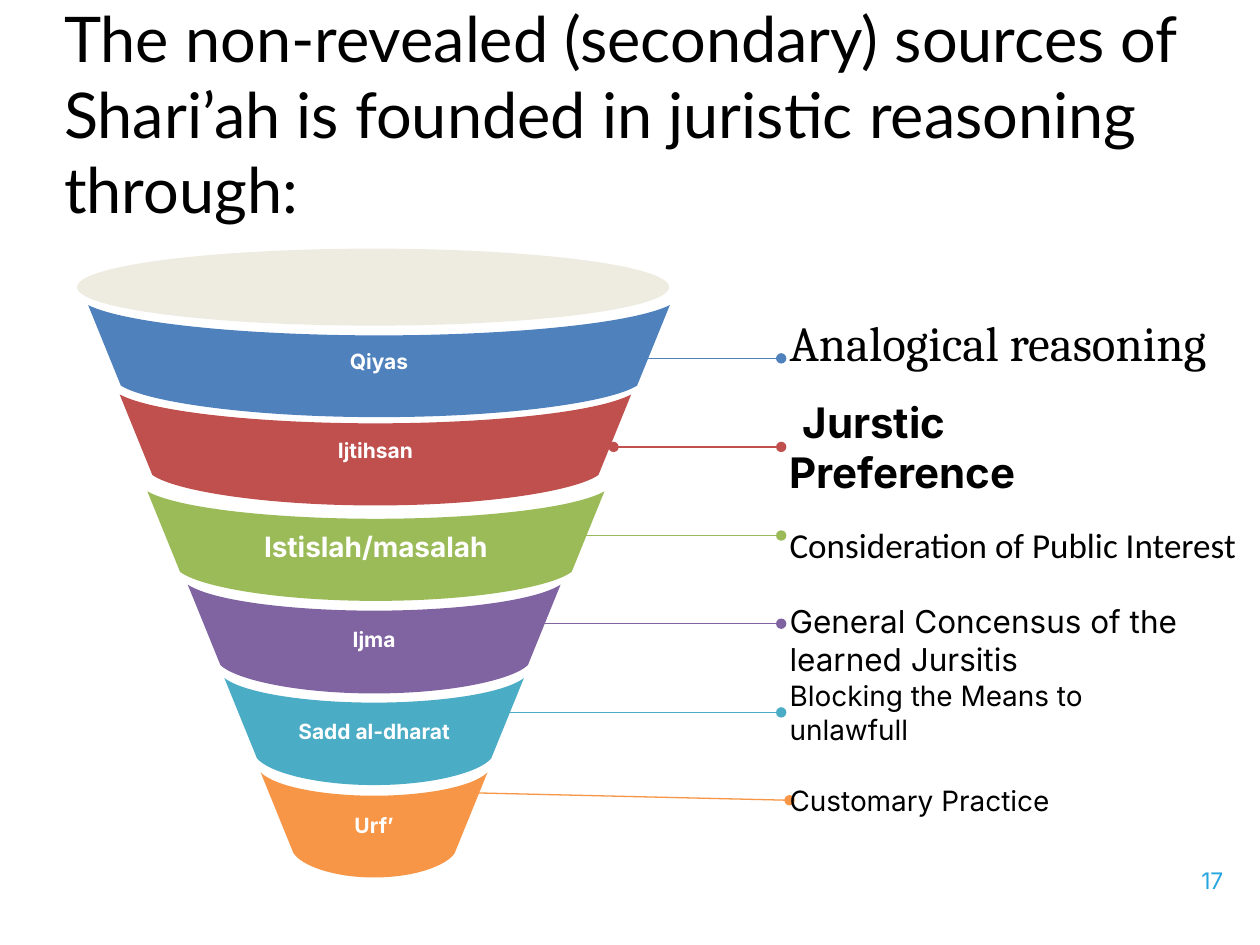
from dataclasses import dataclass

from lxml import etree
from pptx import Presentation
from pptx.dml.color import RGBColor
from pptx.enum.shapes import MSO_CONNECTOR, MSO_SHAPE
from pptx.enum.text import MSO_ANCHOR, MSO_AUTO_SIZE, PP_ALIGN
from pptx.oxml.ns import qn
from pptx.util import Pt

LEFT, CENTER, RIGHT = PP_ALIGN.LEFT, PP_ALIGN.CENTER, PP_ALIGN.RIGHT
MIDDLE, BOTTOM = MSO_ANCHOR.MIDDLE, MSO_ANCHOR.BOTTOM
NO_FIT = MSO_AUTO_SIZE.NONE
STRAIGHT, ELLIPSE = MSO_CONNECTOR.STRAIGHT, MSO_SHAPE.OVAL
LEFT_SIDE = 1


@dataclass(frozen=True)
class Theme:
    """Colours, fonts and type sizes of the slide."""
    ink: str = "000000"
    paper: str = "FFFFFF"
    rim: str = "EEECE1"
    number: str = "25A6E0"
    title_font: str = "Lato"
    body_font: str = "Inter"
    serif_font: str = "Cambria"
    plain_font: str = "Calibri"
    title_size: int = 36
    huge_size: int = 28
    large_size: int = 24
    medium_size: int = 20
    label_size: int = 18
    small_size: int = 16
    band_size: int = 12
    number_size: int = 13


@dataclass(frozen=True)
class Band:
    """One funnel band: its name, colour, box and name size."""
    name: str
    color: str
    box: tuple
    size: int


@dataclass(frozen=True)
class Label:
    """One explanation with its box, type and leader line."""
    text: str
    box: tuple
    font: str
    size: int
    start: tuple
    end: tuple
    bold: bool = False
    indent: float = 0


THEME = Theme()
LABEL_LEFT, LEADER_END = 451.2, 446.4

BANDS = [
    Band("Qiyas", "4F81BD", (50.4, 174.4, 332.4, 64), THEME.band_size),
    Band("Ijtihsan", "C0504D", (68.4, 225.4, 292.3, 63.4), THEME.band_size),
    Band("Istislah/masalah", "9BBB59", (84.2, 280.8, 261.2, 62.6), THEME.small_size),
    Band("Ijma", "8064A2", (107.3, 334.1, 213.1, 62.2), THEME.band_size),
    Band("Sadd al-dharat", "4BACC6", (128.2, 387.4, 171.2, 61.2), THEME.band_size),
    Band("Urf’", "F79646", (149, 441.4, 129.6, 60), THEME.band_size),
]

LABELS = [
    Label("Analogical reasoning", (LABEL_LEFT, 165, 268.6, 61), THEME.serif_font,
          THEME.huge_size, (354.2, 204.8), (LEADER_END, 204.8)),
    Label("Jurstic Preference", (LABEL_LEFT, 237.2, 219.6, 36), THEME.body_font,
          THEME.large_size, (350.6, 255.4), (LEADER_END, 255.4), True, 7.4),
    Label("Consideration of Public Interest", (LABEL_LEFT, 289.5, 268.6, 43.2),
          THEME.plain_font, THEME.medium_size, (323.3, 306), (LEADER_END, 306)),
    Label("General Concensus of the learned Jursitis", (LABEL_LEFT, 338.6, 256.3, 54.6),
          THEME.body_font, THEME.label_size, (299.5, 356.4), (LEADER_END, 356.4)),
    Label("Blocking the Means to unlawfull", (LABEL_LEFT, 389, 219.6, 36),
          THEME.body_font, THEME.small_size, (275.8, 407.1), (LEADER_END, 407.1)),
    Label("Customary Practice", (LABEL_LEFT, 439.3, 219.6, 36), THEME.body_font,
          THEME.small_size, (263.5, 452.9), (LABEL_LEFT, 457.3)),
]


def write(shape, text, font, size, color, align, anchor=MIDDLE, bold=False):
    """Put one formatted run into a shape without margins and return its paragraph."""
    frame = shape.text_frame
    frame.auto_size, frame.word_wrap, frame.vertical_anchor = NO_FIT, True, anchor
    frame.margin_left = frame.margin_right = frame.margin_top = frame.margin_bottom = 0
    para = frame.paragraphs[0]
    para.alignment = align
    span = para.add_run()
    span.text = text
    span.font.name, span.font.size, span.font.bold = font, Pt(size), bold
    span.font.color.rgb = RGBColor.from_string(color)
    return para


def paint(shape, color):
    """Fill a shape flat, with no outline or shadow."""
    shape.shadow.inherit = False
    shape.fill.solid()
    shape.fill.fore_color.rgb = RGBColor.from_string(color)
    shape.line.fill.background()


def sagging_edge(center, half, y, sag, near, far, lift):
    """Return the seven curve points of a sagging edge from left to right."""
    sides = [(-1, 0), (-far, lift), (-near, 1), (0, 1), (near, 1), (far, lift), (1, 0)]
    return [(Pt(center + across * half), Pt(y + down * sag)) for across, down in sides]


def bend(shape):
    """Turn the two edges of a band, drawn as straight guides, into cubic curves."""
    lines = list(shape._element.iter(qn("a:lnTo")))
    for first in (1, 4, 8, 11):
        curve = etree.Element(qn("a:cubicBezTo"))
        lines[first].addprevious(curve)
        for line in lines[first:first + 3]:
            curve.append(line[0])
            line.getparent().remove(line)


def add_band(group, band, top_sag, inset=18.7, drop=46):
    """Draw one curved funnel band with its name."""
    left, top, width, height = band.box
    center, half = left + width / 2, width / 2
    upper = sagging_edge(center, half, top, top_sag, 0.42, 0.86, 0.65)
    lower = sagging_edge(center, half - inset, top + drop, height - drop, 0.5, 0.9, 0.52)
    builder = group.shapes.build_freeform(*upper[0])
    builder.add_line_segments(lower + upper[::-1], close=True)
    shape = builder.convert_to_shape()
    bend(shape)
    paint(shape, band.color)
    write(shape, band.name, THEME.body_font, band.size, THEME.paper, CENTER, bold=True)


def add_funnel(page, box):
    """Draw the bands and the rim ellipse, whose box is given."""
    group = page.shapes.add_group_shape()
    for index, band in enumerate(BANDS):
        add_band(group, band, 17.3 - 0.8 * index)
    rim = group.shapes.add_shape(ELLIPSE, *map(Pt, box))
    paint(rim, THEME.rim)


def add_label(page, label, color):
    """Place one explanation and the dotted leader pointing to it."""
    leader = page.shapes.add_connector(STRAIGHT, *map(Pt, label.start + label.end))
    leader.line.color.rgb = RGBColor.from_string(color)
    leader.line.width = Pt(0.75)
    outline = leader.line._get_or_add_ln()
    for end in ("a:headEnd", "a:tailEnd"):
        etree.SubElement(outline, qn(end), type="oval")
    etree.SubElement(leader._element.spPr, qn("a:effectLst"))
    text_box = page.shapes.add_textbox(*map(Pt, label.box))
    para = write(text_box, label.text, label.font, label.size, THEME.ink, LEFT,
                 bold=label.bold)
    if label.indent:
        para._p.get_or_add_pPr().set("indent", str(Pt(label.indent)))
    if label.end[0] == label.box[0]:
        leader.end_connect(text_box, LEFT_SIDE)


def add_title(page, box):
    """Move and format the title placeholder."""
    title = page.shapes.title
    title.left, title.top, title.width, title.height = map(Pt, box)
    write(title, "The non-revealed (secondary) sources of Shari’ah is founded in "
          "juristic reasoning through:", THEME.title_font, THEME.title_size,
          THEME.ink, LEFT, BOTTOM)


def add_number(page, box):
    """Place the page number."""
    write(page.shapes.add_textbox(*map(Pt, box)), "17", THEME.body_font,
          THEME.number_size, THEME.number, RIGHT)


def main():
    """Build the slide and save the deck."""
    deck = Presentation()
    deck.slide_width, deck.slide_height = Pt(720), Pt(540)
    page = deck.slides.add_slide(deck.slide_layouts[5])
    add_title(page, (36.7, 41.5, 646.6, 87.8))
    add_number(page, (655.9, 482.4, 43.2, 41))
    add_funnel(page, (44, 142.1, 338.4, 44))
    for band, label in zip(BANDS, LABELS):
        add_label(page, label, band.color)
    deck.save("out.pptx")


if __name__ == "__main__":
    main()
